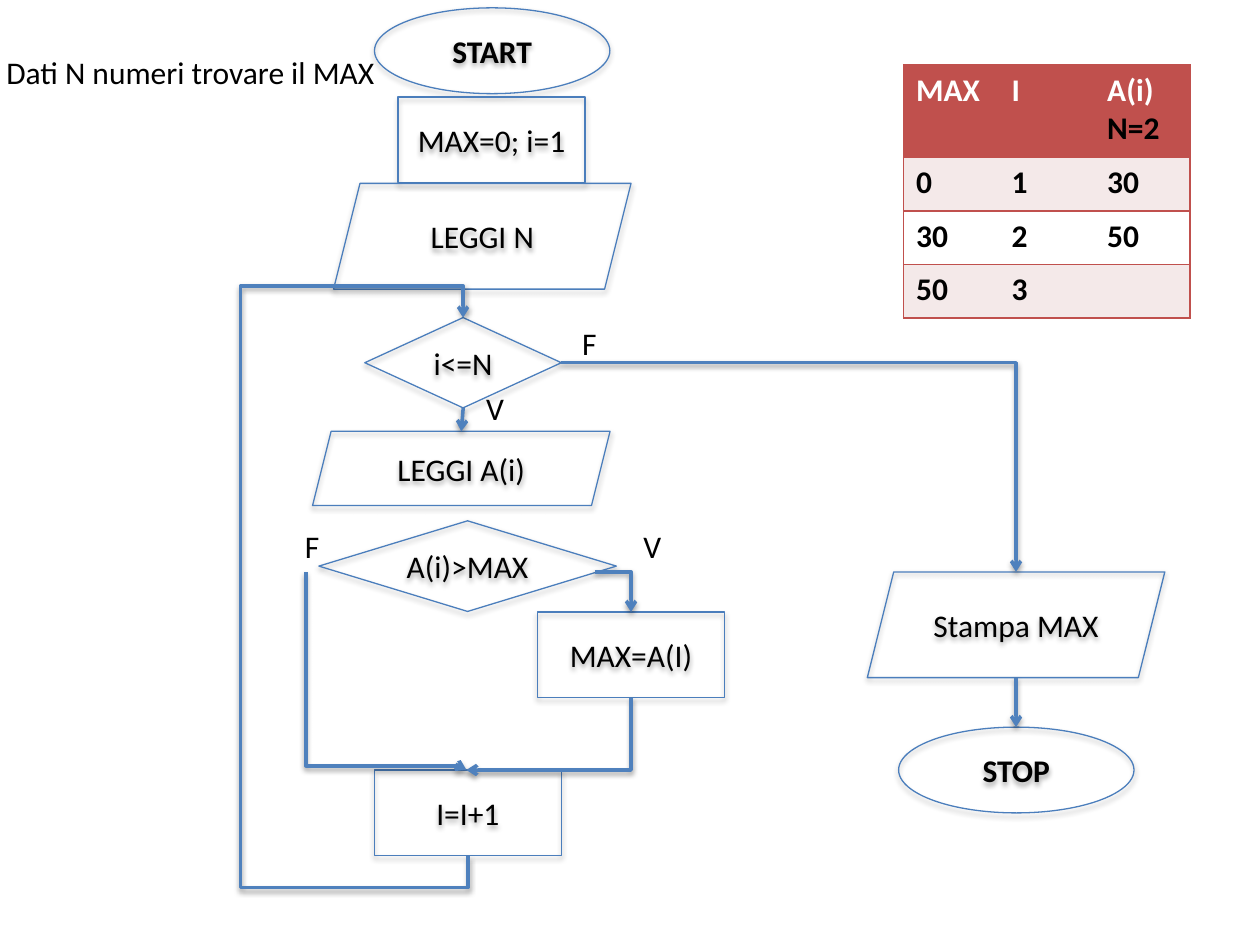
from dataclasses import dataclass
from typing import NamedTuple

from lxml import etree
from pptx import Presentation
from pptx.dml.color import RGBColor
from pptx.enum.shapes import MSO_CONNECTOR, MSO_SHAPE
from pptx.enum.text import MSO_ANCHOR, MSO_AUTO_SIZE, PP_ALIGN
from pptx.oxml.ns import qn
from pptx.util import Pt

ELLIPSE = MSO_SHAPE.OVAL
DIAMOND = MSO_SHAPE.DIAMOND
PARALLELOGRAM = MSO_SHAPE.PARALLELOGRAM
RECTANGLE = MSO_SHAPE.RECTANGLE
STRAIGHT = MSO_CONNECTOR.STRAIGHT
ELBOW = MSO_CONNECTOR.ELBOW
CENTER = PP_ALIGN.CENTER
LEFT = PP_ALIGN.LEFT
MIDDLE = MSO_ANCHOR.MIDDLE
TOP = MSO_ANCHOR.TOP
NO_AUTOFIT = MSO_AUTO_SIZE.NONE
TITLE_ONLY = 5


@dataclass(frozen=True)
class Theme:
    font: str = "Calibri"
    size: float = 18
    text: str = "000000"
    outline: str = "4B7EBC"
    arrow: str = "4F81BD"
    table: str = "C0504D"
    band: str = "F4E9E9"
    white: str = "FFFFFF"
    outline_width: float = 0.75
    arrow_width: float = 2
    border_width: float = 1


class Node(NamedTuple):
    text: str
    kind: MSO_SHAPE
    left: float
    top: float
    width: float
    height: float
    bold: bool = False


class Label(NamedTuple):
    text: str
    left: float
    top: float
    width: float


class Arrow(NamedTuple):
    start: tuple[float, float]
    end: tuple[float, float]
    preset: str = "line"
    rotation: int = 0
    flipped: bool = False
    adjustments: tuple[int, ...] = ()


THEME = Theme()

NODES = [
    Node("START", ELLIPSE, 214, 4.5, 134.5, 49, True),
    Node("STOP", ELLIPSE, 513.5, 415.5, 134.5, 49, True),
    Node("i<=N", DIAMOND, 208.5, 181.5, 112.3, 51.6),
    Node("LEGGI A(i)", PARALLELOGRAM, 178.6, 246.5, 170, 42.4),
    Node("MAX=0; i=1", RECTANGLE, 227.5, 55.5, 106.8, 49),
    Node("LEGGI N", PARALLELOGRAM, 190.6, 104.8, 170, 60.4),
    Node("A(i)>MAX", DIAMOND, 182.2, 297.6, 170, 51.8),
    Node("MAX=A(I)", RECTANGLE, 307.2, 349.7, 106.8, 49),
    Node("I=I+1", RECTANGLE, 214, 440, 106.8, 49),
    Node("Stampa MAX", PARALLELOGRAM, 495.6, 326.8, 170, 60.4),
]

LABELS = [
    Label("F", 167.2, 297.6, 23),
    Label("V", 360.6, 297.6, 25),
    Label("V", 270.8, 219, 25),
    Label("F", 325.6, 181.5, 23),
]

ARROWS = [
    Arrow((340, 326.8), (360.6, 349.7), "bentConnector2"),
    Arrow((174.8, 327), (266.5, 440), "bentConnector3", 270, True, (97900,)),
    Arrow((360.6, 398.7), (266.5, 440), "bentConnector2", 90),
    Arrow((267.4, 489), (264.67, 181.5), "bentConnector5", 90, True,
          (-5900, 4774800, 105900)),
    Arrow((320.8, 207.3), (580.6, 326.8), "bentConnector2"),
    Arrow((580.6, 387.2), (580.6, 415.5)),
    Arrow((264.7, 233), (263.6, 246.5)),
]

HEADER = ("MAX", "I", "A(i)\nN=2")
ROWS = [HEADER, ("0", "1", "30"), ("30", "2", "50"), ("50", "3", "")]


def color(value: str) -> RGBColor:
    return RGBColor.from_string(value)


def style_paragraph(paragraph, value: str = THEME.text, bold: bool = False) -> None:
    for run in paragraph.runs:
        run.font.name = THEME.font
        run.font.size = Pt(THEME.size)
        run.font.bold = bold
        run.font.color.rgb = color(value)


def add_shadow(shape, distance: float, opacity: int) -> None:
    effects = etree.SubElement(shape._element.spPr, qn("a:effectLst"))
    shadow = etree.SubElement(
        effects, qn("a:outerShdw"), blurRad=str(Pt(3.1)), dist=str(Pt(distance)),
        dir="5400000", rotWithShape="0")
    shade = etree.SubElement(shadow, qn("a:srgbClr"), val=THEME.text)
    etree.SubElement(shade, qn("a:alpha"), val=str(opacity * 1000))


def draw_node(slide, node: Node) -> None:
    shape = slide.shapes.add_shape(
        node.kind, Pt(node.left), Pt(node.top), Pt(node.width), Pt(node.height))
    shape.fill.background()
    shape.line.color.rgb = color(THEME.outline)
    shape.line.width = Pt(THEME.outline_width)
    add_shadow(shape, 1.8, 35)
    shape.text_frame.text = node.text
    shape.text_frame.vertical_anchor = MIDDLE
    paragraph = shape.text_frame.paragraphs[0]
    paragraph.alignment = CENTER
    style_paragraph(paragraph, bold=node.bold)


def draw_label(slide, label: Label) -> None:
    box = slide.shapes.add_textbox(
        Pt(label.left), Pt(label.top), Pt(label.width), Pt(29))
    box.text_frame.word_wrap = False
    box.text_frame.text = label.text
    style_paragraph(box.text_frame.paragraphs[0])


def draw_arrow(slide, arrow: Arrow) -> None:
    (x1, y1), (x2, y2) = arrow.start, arrow.end
    if arrow.rotation:
        center_x, center_y = (x1 + x2) / 2, (y1 + y2) / 2
        half_width, half_height = abs(y2 - y1) / 2, abs(x2 - x1) / 2
        x1, x2 = center_x - half_width, center_x + half_width
        y1, y2 = center_y - half_height, center_y + half_height
    if arrow.flipped:
        x1, x2 = x2, x1
    kind = STRAIGHT if arrow.preset == "line" else ELBOW
    connector = slide.shapes.add_connector(kind, Pt(x1), Pt(y1), Pt(x2), Pt(y2))
    properties = connector._element.spPr
    properties.find(qn("a:xfrm")).set("rot", str(arrow.rotation * 60000))
    geometry = properties.find(qn("a:prstGeom"))
    geometry.set("prst", arrow.preset)
    guides = geometry.find(qn("a:avLst"))
    for number, value in enumerate(arrow.adjustments, 1):
        etree.SubElement(guides, qn("a:gd"), name=f"adj{number}", fmla=f"val {value}")
    connector.line.color.rgb = color(THEME.arrow)
    connector.line.width = Pt(THEME.arrow_width)
    etree.SubElement(properties.find(qn("a:ln")), qn("a:tailEnd"), type="arrow")
    add_shadow(connector, 1.6, 38)


def set_border(cell, side: str, visible: bool) -> None:
    properties = cell._tc.get_or_add_tcPr()
    line = etree.SubElement(properties, qn(f"a:{side}"), w=str(Pt(THEME.border_width)))
    if visible:
        fill = etree.SubElement(line, qn("a:solidFill"))
        etree.SubElement(fill, qn("a:srgbClr"), val=THEME.table)
    else:
        etree.SubElement(line, qn("a:noFill"))


def draw_table(slide) -> None:
    columns = len(HEADER)
    frame = slide.shapes.add_table(
        len(ROWS), columns, Pt(516.3), Pt(37.2), Pt(54.6 * columns), Pt(144.6))
    table = frame.table
    for column in table.columns:
        column.width = Pt(54.6)
    for row_index, values in enumerate(ROWS):
        table.rows[row_index].height = Pt(30.6 if row_index else 52.8)
        background = THEME.band if row_index % 2 else THEME.white
        for column_index, value in enumerate(values):
            cell = table.cell(row_index, column_index)
            cell.text_frame.text = value
            for line_index, paragraph in enumerate(cell.text_frame.paragraphs):
                is_heading = row_index == 0 and line_index == 0
                style_paragraph(paragraph, THEME.white if is_heading else THEME.text, True)
            set_border(cell, "lnL", column_index == 0)
            set_border(cell, "lnR", column_index == columns - 1)
            set_border(cell, "lnT", True)
            set_border(cell, "lnB", True)
            cell.fill.solid()
            cell.fill.fore_color.rgb = color(background if row_index else THEME.table)


def draw_title(slide) -> None:
    title = slide.shapes.title
    title.left, title.top, title.width, title.height = Pt(-3.6), Pt(26.8), Pt(225.4), Pt(29)
    title.text_frame.text = "Dati N numeri trovare il MAX"
    title.text_frame.word_wrap = False
    title.text_frame.auto_size = NO_AUTOFIT
    title.text_frame.vertical_anchor = TOP
    paragraph = title.text_frame.paragraphs[0]
    paragraph.alignment = LEFT
    style_paragraph(paragraph)


def main() -> None:
    presentation = Presentation()
    presentation.slide_width, presentation.slide_height = Pt(720), Pt(540)
    slide = presentation.slides.add_slide(presentation.slide_layouts[TITLE_ONLY])
    draw_title(slide)
    for node in NODES:
        draw_node(slide, node)
    for arrow in ARROWS:
        draw_arrow(slide, arrow)
    for label in LABELS:
        draw_label(slide, label)
    draw_table(slide)
    presentation.save("out.pptx")


if __name__ == "__main__":
    main()
